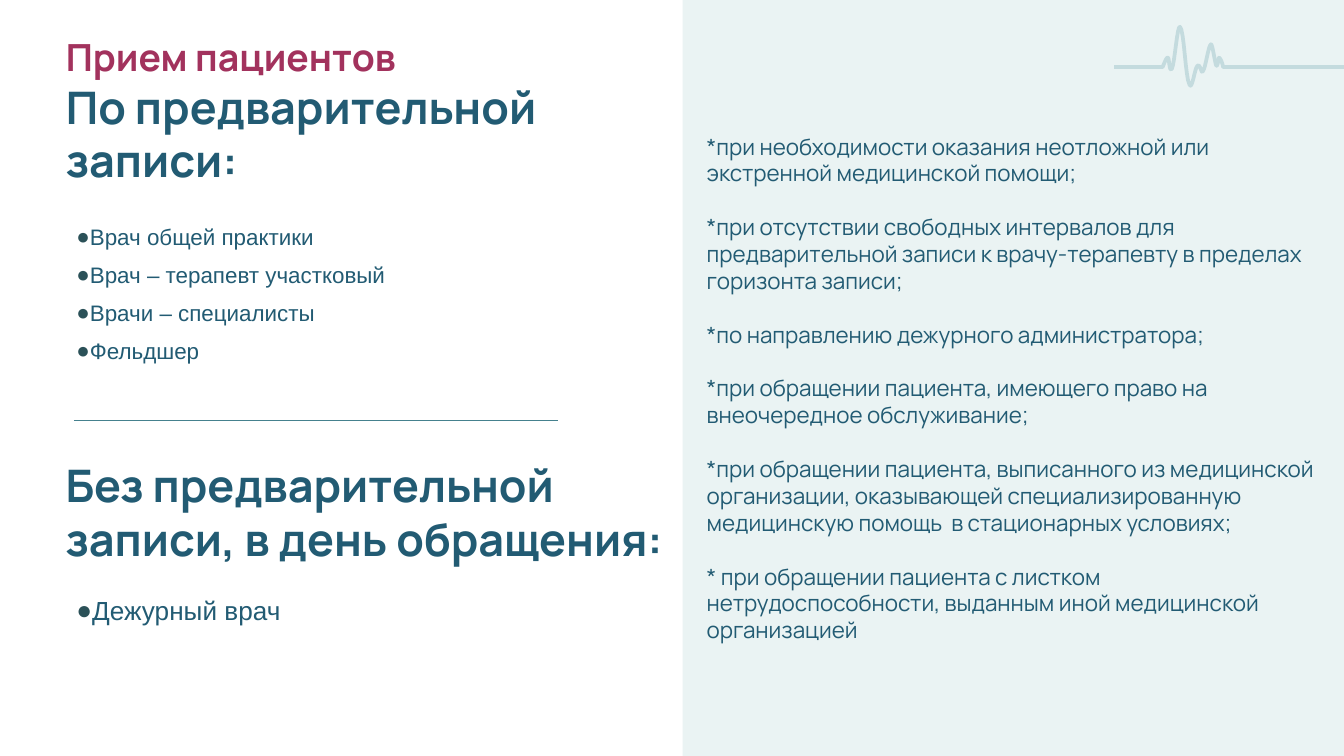
import dataclasses
import typing

import lxml.etree
import pptx
import pptx.dml.color
import pptx.enum.shapes
import pptx.enum.text
import pptx.oxml
import pptx.oxml.ns
import pptx.util

WIDTH = pptx.util.Inches(10)
HEIGHT = WIDTH * 9 // 16
COLORS = {
    "panel": "EAF3F3",
    "ink": "225B73",
    "accent": "A2325D",
    "bullet": "2B5158",
    "rule": "45818E",
    "pulse": "90BAC3",
}


@dataclasses.dataclass
class Box:
    """A place on the slide, in percent of its width and height."""
    left: float
    top: float
    width: float
    height: float

    def place(self) -> tuple:
        return (across(self.left), down(self.top),
                across(self.width), down(self.height))


@dataclasses.dataclass
class Line:
    text: str
    size: float
    color: str = "ink"


@dataclasses.dataclass
class Block:
    box: Box
    lines: typing.List[Line]
    style: dict


def across(share: float) -> int:
    return round(WIDTH * share / 100)


def down(share: float) -> int:
    return round(HEIGHT * share / 100)


def paint(name: str) -> pptx.dml.color.RGBColor:
    return pptx.dml.color.RGBColor.from_string(COLORS[name])


def add_mark(para) -> None:
    """Give a paragraph a round bullet with a hanging indent."""
    props = para._p.get_or_add_pPr()
    props.set("marL", str(pptx.util.Inches(0.08)))
    props.set("indent", str(pptx.util.Inches(-0.33)))
    space = pptx.oxml.ns.nsdecls("a")
    for part in (
        f'<a:buClr {space}><a:srgbClr val="{COLORS["bullet"]}"/></a:buClr>',
        f'<a:buFont {space} typeface="Arial"/>',
        f'<a:buChar {space} char="●"/>',
    ):
        props.append(pptx.oxml.parse_xml(part))


def write(frame, lines: typing.List[Line], *, font: str = "Manrope",
          bold: bool = False, mark: bool = False, before: float = 0,
          after: float = 0, inset: float = 0.05) -> None:
    frame.word_wrap = True
    frame.auto_size = pptx.enum.text.MSO_AUTO_SIZE.NONE
    frame.vertical_anchor = pptx.enum.text.MSO_ANCHOR.TOP
    frame.margin_left = frame.margin_right = pptx.util.Inches(0.1)
    frame.margin_top = frame.margin_bottom = pptx.util.Inches(inset)
    for index, line in enumerate(lines):
        para = frame.add_paragraph() if index else frame.paragraphs[0]
        para.text = line.text
        para.alignment = pptx.enum.text.PP_ALIGN.LEFT
        if mark:
            add_mark(para)
        para.space_before = pptx.util.Pt(before if index else 0)
        para.space_after = pptx.util.Pt(after)
        for run in para.runs:
            run.font.name = font
            run.font.size = pptx.util.Pt(line.size)
            run.font.bold = bold
            run.font.color.rgb = paint(line.color)


def trace(start: tuple, curves: list, steps: int = 8) -> list:
    """Turn Bezier curves into the points of a fine polyline."""
    points = []
    for one, two, end in curves:
        for step in range(1, steps + 1):
            t = step / steps
            parts = ((1 - t) ** 3, 3 * t * (1 - t) ** 2,
                     3 * t * t * (1 - t), t ** 3)
            knots = (start, one, two, end)
            points.append(tuple(sum(part * knot[axis]
                                    for part, knot in zip(parts, knots))
                                for axis in (0, 1)))
        start = end
    return points


def draw_pulse(slide) -> None:
    points = [(8.65, 0.5), *trace((8.65, 0.5), BEATS), (10, 0.5)]
    inch = pptx.util.Inches
    build = slide.shapes.build_freeform(inch(8.29), inch(0.5))
    build.add_line_segments([(inch(x), inch(y)) for x, y in points],
                            close=False)
    shape = build.convert_to_shape()
    shape.shadow.inherit = False
    shape.fill.background()
    shape.line.color.rgb = paint("pulse")
    shape.line.width = pptx.util.Pt(2)
    tint = shape.line._ln.find(".//" + pptx.oxml.ns.qn("a:srgbClr"))
    lxml.etree.SubElement(tint, pptx.oxml.ns.qn("a:alpha"), val="41000")


# Heartbeat curves in inches: two control points and an end point each
BEATS = [
    ((8.66, 0.48), (8.68, 0.42), (8.69, 0.43)),
    ((8.70, 0.43), (8.70, 0.55), (8.72, 0.51)),
    ((8.74, 0.47), (8.76, 0.18), (8.78, 0.20)),
    ((8.81, 0.22), (8.82, 0.58), (8.85, 0.63)),
    ((8.87, 0.68), (8.89, 0.50), (8.91, 0.49)),
    ((8.93, 0.47), (8.94, 0.56), (8.95, 0.53)),
    ((8.97, 0.51), (8.99, 0.34), (9.01, 0.33)),
    ((9.02, 0.32), (9.04, 0.47), (9.05, 0.49)),
    ((9.06, 0.50), (9.07, 0.42), (9.07, 0.43)),
    ((9.08, 0.43), (9.10, 0.48), (9.10, 0.50)),
]
TITLE = Block(Box(3.9, 2.8, 84.4, 11.2), [
    Line("Прием пациентов", 20, "accent"),
    Line("По предварительной\nзаписи:", 24),
], {"bold": True, "inset": 0.1})
LIST = {"font": "Arial", "mark": True, "before": 3, "after": 3}
BLOCKS = [
    Block(Box(4.7, 27.73, 38.8, 27.2), [Line(text, 12) for text in (
        "Врач общей практики",
        "Врач – терапевт участковый",
        "Врачи – специалисты",
        "Фельдшер",
    )], {**LIST, "inset": 0.1}),
    Block(Box(3.9, 59.73, 50, 16.18), [
        Line("Без предварительной\nзаписи, в день обращения:", 24),
    ], {"bold": True}),
    Block(Box(4.7, 77.8, 19.6, 11.73), [Line("Дежурный врач", 14)], LIST),
    Block(Box(51.6, 16.67, 47.7, 70.04), [Line(text, 12) for text in (
        "*при необходимости оказания неотложной или экстренной "
        "медицинской помощи;",
        "*при отсутствии свободных интервалов для предварительной записи "
        "к врачу-терапевту в пределах горизонта записи;",
        "*по направлению дежурного администратора;",
        "*при обращении пациента, имеющего право на внеочередное "
        "обслуживание;",
        "*при обращении пациента, выписанного из медицинской организации, "
        "оказывающей специализированную медицинскую помощь  в стационарных "
        "условиях;",
        "* при обращении пациента с листком нетрудоспособности, выданным "
        "иной медицинской организацией",
    )], {"before": 14.4}),
]


def main() -> None:
    deck = pptx.Presentation()
    deck.slide_width, deck.slide_height = WIDTH, HEIGHT
    slide = deck.slides.add_slide(deck.slide_layouts[5])
    shapes = slide.shapes

    # Tinted right panel, behind the title
    panel = shapes.add_shape(pptx.enum.shapes.MSO_SHAPE.RECTANGLE,
                             *Box(50.8, 0, 49.2, 100).place())
    panel.shadow.inherit = False
    panel.fill.solid()
    panel.fill.fore_color.rgb = paint("panel")
    panel.line.fill.background()

    # Title
    head = shapes.title
    head.left, head.top, head.width, head.height = TITLE.box.place()
    write(head.text_frame, TITLE.lines, **TITLE.style)
    head._element.addprevious(panel._element)

    # Rule between the two kinds of visit
    rule = shapes.add_connector(pptx.enum.shapes.MSO_CONNECTOR.STRAIGHT,
                                across(5.5), down(55.6),
                                across(41.5), down(55.6))
    rule.line.color.rgb = paint("rule")
    rule.line.width = pptx.util.Pt(0.75)
    lxml.etree.SubElement(rule._element.spPr, pptx.oxml.ns.qn("a:effectLst"))

    # Heartbeat line and text blocks
    draw_pulse(slide)
    for block in BLOCKS:
        text = shapes.add_textbox(*block.box.place())
        write(text.text_frame, block.lines, **block.style)

    deck.save("out.pptx")


if __name__ == "__main__":
    main()
